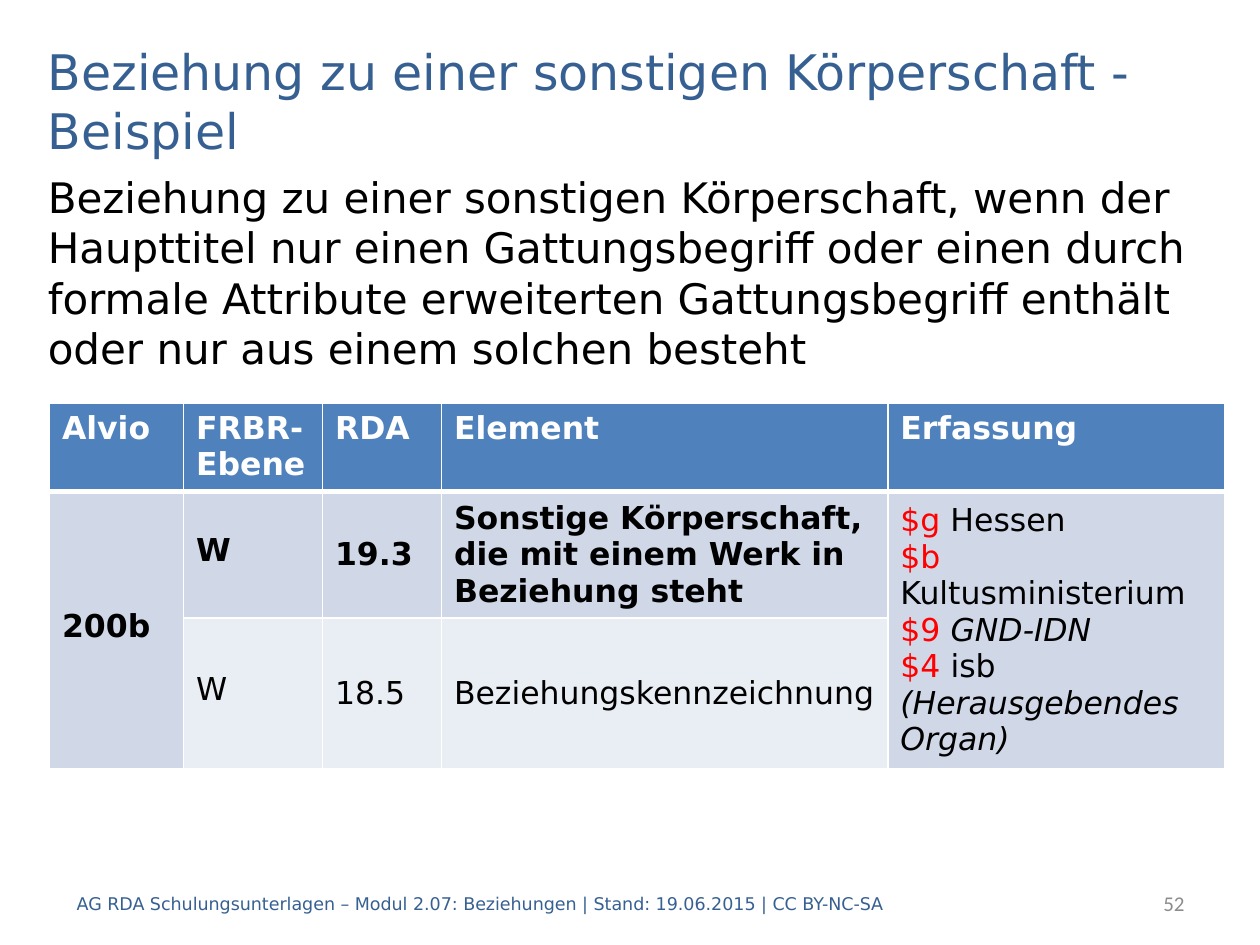
from dataclasses import dataclass

from lxml.etree import SubElement as Sub
from pptx import Presentation
from pptx.dml.color import RGBColor as Rgb
from pptx.enum.text import MSO_ANCHOR as Anchor, PP_ALIGN as Align
from pptx.oxml.ns import qn
from pptx.util import Pt

HUES = {"blue": "376092", "black": "000000", "white": "FFFFFF", "red": "FF0000",
        "gray": "8C8C8C", "head": "4F81BD", "dark": "D0D8E8", "pale": "E9EDF4"}
SANS = "DejaVu Sans"


@dataclass
class Run:
    text: str
    hue: str = "black"
    slant: bool = False


@dataclass
class Label:
    text: str
    box: tuple[float, float, float, float]
    size: float
    hue: str
    face: str = SANS
    anchor: Anchor = Anchor.MIDDLE
    align: Align = Align.LEFT


@dataclass
class Entry:
    row: int
    col: int
    lines: list[list[Run]]
    bold: bool = False
    tight: bool = False


LABELS = [
    Label("Beziehung zu einer sonstigen Körperschaft - Beispiel",
          (20.2, 14.4, 680.4, 85.7), 28, "blue"),
    Label("Beziehung zu einer sonstigen Körperschaft, wenn der Haupttitel nur einen "
          "Gattungsbegriff oder einen durch formale Attribute erweiterten "
          "Gattungsbegriff enthält oder nur aus einem solchen besteht",
          (20.2, 94.3, 680.4, 124.6), 24, "black", anchor=Anchor.TOP),
    Label("AG RDA Schulungsunterlagen – Modul 2.07: Beziehungen | "
          "Stand: 19.06.2015 | CC BY-NC-SA", (36.7, 501.8, 481.7, 28.8), 10, "blue"),
    Label("52", (569.5, 501.8, 114.5, 28.8), 12, "gray", "Calibri", align=Align.RIGHT),
]
HEADS = ["Alvio", "FRBR-Ebene", "RDA", "Element", "Erfassung"]
WIDTHS = [76.6, 79.4, 68, 255.1, 192.7]
HEIGHTS = [21.6, 31.7, 21.6]
FILLS = ["head", "dark", "pale"]
ENTRIES = [Entry(0, col, [[Run(head, "white")]], True) for col, head in enumerate(HEADS)] + [
    Entry(1, 0, [[Run("200b")]], True, True),
    Entry(1, 1, [[Run("W")]], True, True),
    Entry(1, 2, [[Run("19.3")]], True),
    Entry(1, 3, [[Run("Sonstige Körperschaft, die mit einem Werk in Beziehung steht")]], True),
    Entry(1, 4, [
        [Run("$g", "red"), Run(" Hessen\n"), Run("$b", "red"), Run(" Kultusministerium")],
        [Run("$9 ", "red"), Run("GND-IDN", slant=True)],
        [Run("$4 ", "red"), Run("isb "), Run("(Herausgebendes Organ)", slant=True)],
    ]),
    Entry(2, 1, [[Run("W")]], tight=True),
    Entry(2, 2, [[Run("18.5")]]),
    Entry(2, 3, [[Run("Beziehungskennzeichnung")]]),
]


def tint(name: str) -> Rgb:
    """Return the named colour."""
    return Rgb.from_string(HUES[name])


def put_label(slide, label: Label) -> None:
    """Add one text box."""
    frame = slide.shapes.add_textbox(*map(Pt, label.box)).text_frame
    frame.word_wrap = True
    frame.vertical_anchor = label.anchor
    para = frame.paragraphs[0]
    para.text = label.text
    para.alignment = label.align
    font = para.font
    font.name, font.size = label.face, Pt(label.size)
    font.color.rgb = tint(label.hue)


def style_cell(cell, row: int, hue: str) -> None:
    """Fill a cell and draw its white borders."""
    cell.fill.solid()
    cell.fill.fore_color.rgb = tint(hue)
    props = cell._tc.get_or_add_tcPr()
    for spot, side in enumerate(("lnL", "lnR", "lnT", "lnB")):
        thick = 3 if row == 0 and side == "lnB" else 1
        line = Sub(props, qn(f"a:{side}"), w=str(Pt(thick)))
        Sub(Sub(line, qn("a:solidFill")), qn("a:srgbClr"), val=HUES["white"])
        props.insert(spot, line)


def put_entry(grid, entry: Entry) -> None:
    """Write the text of one cell."""
    cell = grid.cell(entry.row, entry.col)
    cell.vertical_anchor = Anchor.MIDDLE if entry.row else Anchor.TOP
    frame = cell.text_frame
    for spot, line in enumerate(entry.lines):
        para = frame.add_paragraph() if spot else frame.paragraphs[0]
        para.font.name, para.font.size = SANS, Pt(18)
        para.font.bold = entry.bold
        if entry.tight:
            para.line_spacing = Pt(16)
            para.space_before = para.space_after = Pt(6)
        for part in line:
            run = para.add_run()
            run.text = part.text.rstrip("\n")
            run.font.color.rgb = tint(part.hue)
            run.font.italic = part.slant
            if part.text.endswith("\n"):
                para.add_line_break()


def put_table(slide) -> None:
    """Add the table of elements."""
    shape = slide.shapes.add_table(len(HEIGHTS), len(WIDTHS), Pt(28.3), Pt(230.6),
                                   Pt(sum(WIDTHS)), Pt(sum(HEIGHTS)))
    grid = shape.table
    grid.horz_banding = False
    for col, width in zip(grid.columns, WIDTHS):
        col.width = Pt(width)
    for row, (line, height) in enumerate(zip(grid.rows, HEIGHTS)):
        line.height = Pt(height)
        for cell in line.cells:
            style_cell(cell, row, FILLS[row])
    for col in (0, len(WIDTHS) - 1):
        grid.cell(1, col).merge(grid.cell(2, col))
    for entry in ENTRIES:
        put_entry(grid, entry)
    shape.height = Pt(208.8)


def main() -> None:
    """Build and save the slide."""
    deck = Presentation()
    deck.slide_width, deck.slide_height = Pt(720), Pt(540)
    slide = deck.slides.add_slide(deck.slide_layouts[6])
    for label in LABELS:
        put_label(slide, label)
    put_table(slide)
    deck.save("out.pptx")


if __name__ == "__main__":
    main()
